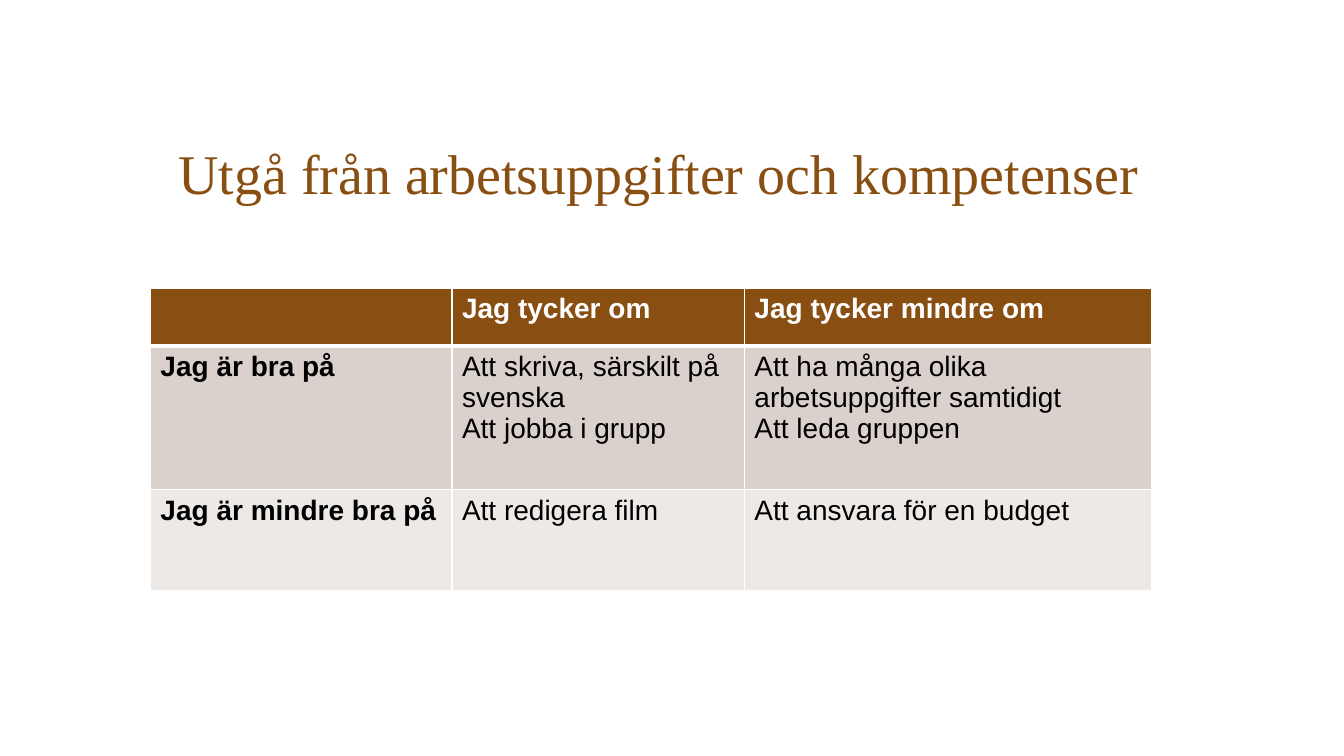
"""Build a slide with a table that sorts tasks by skill and liking."""
from pptx import Presentation
from pptx.dml.color import RGBColor
from pptx.enum.text import MSO_ANCHOR, MSO_AUTO_SIZE, PP_ALIGN
from pptx.oxml import parse_xml
from pptx.oxml.ns import nsdecls
from pptx.util import Cm, Pt

HUES = {"brown": "894E11", "white": "FFFFFF", "black": "000000",
        "dark": "DAD0CC", "light": "EDE9E7"}
FILLS = ["brown", "dark", "light"]
WIDTHS = [7.6, 7.37, 10.25]
HEIGHTS = [1.44, 3.63, 2.54]
ROWS = [
    ["", "Jag tycker om", "Jag tycker mindre om"],
    ["Jag är bra på",
     "Att skriva, särskilt på svenska\nAtt jobba i grupp",
     "Att ha många olika arbetsuppgifter samtidigt\nAtt leda gruppen"],
    ["Jag är mindre bra på", "Att redigera film", "Att ansvara för en budget"],
]


def write(frame, text, size=20, face="Arial", hue="black", bold=False, lead=1.0):
    frame.text = text
    for para in frame.paragraphs:
        para.alignment = PP_ALIGN.LEFT
        para.line_spacing = lead
        font = para.font
        for run in para.runs:
            font = run.font
        font.size, font.name, font.bold = Pt(size), face, bold
        font.color.rgb = RGBColor.from_string(HUES[hue])


deck = Presentation()
deck.slide_width, deck.slide_height = Cm(33.87), Cm(19.05)
slide = deck.slides.add_slide(deck.slide_layouts[5])

title = slide.shapes.title
title.left, title.top, title.width, title.height = Cm(4.5), Cm(1), Cm(24.5), Cm(5)
frame = title.text_frame
frame.auto_size = MSO_AUTO_SIZE.NONE
frame.word_wrap = True
frame.vertical_anchor = MSO_ANCHOR.BOTTOM
frame.margin_left = frame.margin_top = frame.margin_right = Cm(0)
frame.margin_bottom = Cm(0.79)
write(frame, "Utgå från arbetsuppgifter och kompetenser", size=40,
      face="Times New Roman", hue="brown", lead=0.9)

table = slide.shapes.add_table(3, 3, Cm(3.79), Cm(7.27), Cm(sum(WIDTHS)),
                               Cm(sum(HEIGHTS))).table
table.horz_banding = False
for col, width in zip(table.columns, WIDTHS):
    col.width = Cm(width)

for r, (row, height) in enumerate(zip(ROWS, HEIGHTS)):
    table.rows[r].height = Cm(height)
    for c, text in enumerate(row):
        cell = table.cell(r, c)
        write(cell.text_frame, text, hue="black" if r else "white",
              bold=r == 0 or c == 0)
        cell.fill.solid()
        cell.fill.fore_color.rgb = RGBColor.from_string(HUES[FILLS[r]])
        props = cell._tc.get_or_add_tcPr()
        for n, side in enumerate("LRTB"):
            thick = (r, side) in [(0, "B"), (1, "T")]
            props.insert(n, parse_xml(
                f'<a:ln{side} {nsdecls("a")} w="{Pt(3 if thick else 1)}"><a:solidFill>'
                f'<a:srgbClr val="{HUES["white"]}"/></a:solidFill></a:ln{side}>'))

deck.save("out.pptx")
